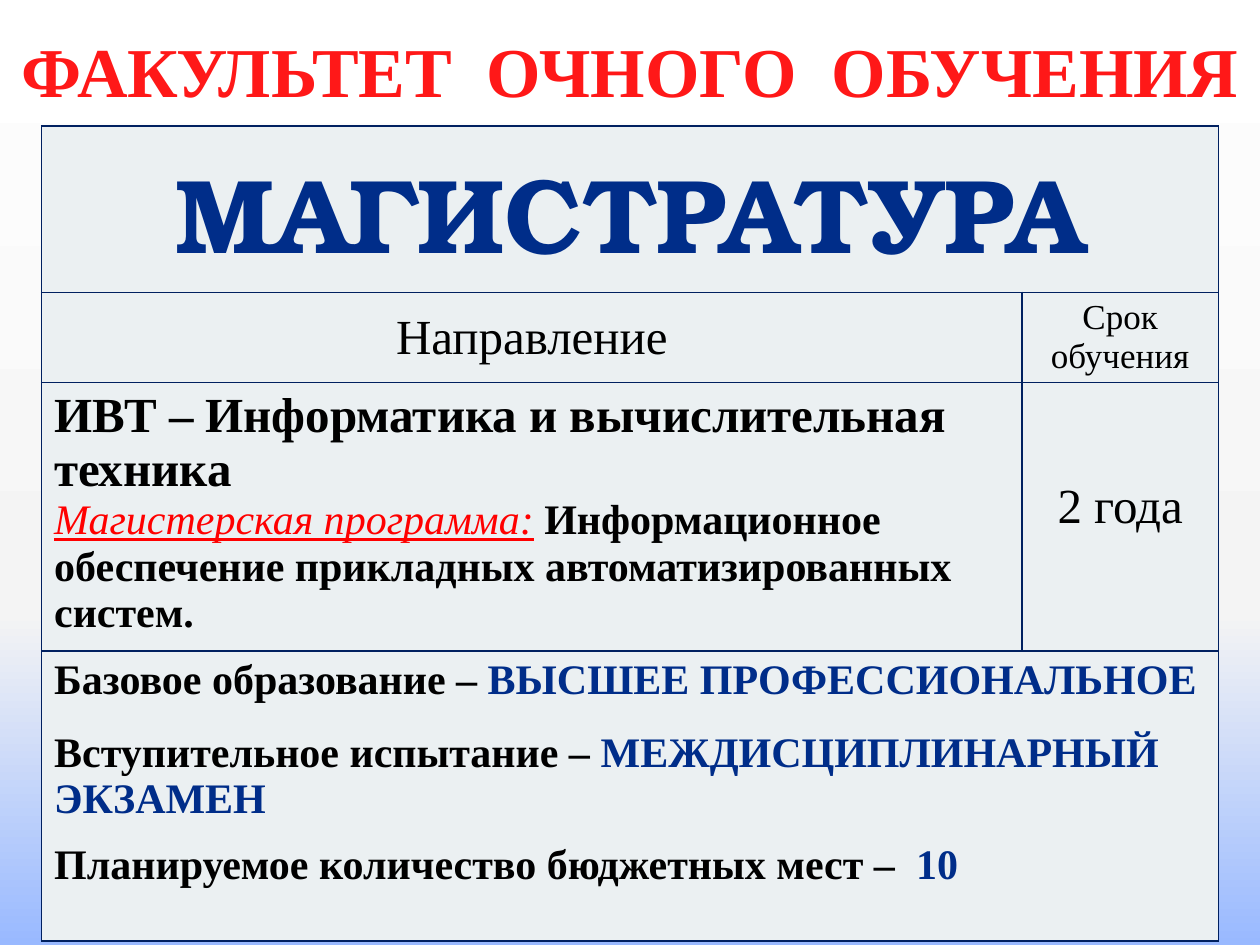
from lxml import etree
from pptx import Presentation
from pptx.dml.color import RGBColor
from pptx.enum import text
from pptx.oxml.ns import qn
from pptx.util import Inches, Pt

SERIF = "Times New Roman"
INK, RED, PANEL, BORDER, OUTLINE = "000000", "FF0000", "EBF0F2", "002060", "002165"
SKY = [(0, "FFFFFF"), (65, "F4F4F4"), (100, "99B9FF")]
SCARLET = [(0, "FF9797"), (75, "FF1818"), (100, "BD0000")]
NAVY = [(0, "001644"), (43, "002D89"), (48, "002A80"), (100, "001644")]
CENTER, LEFT = text.PP_ALIGN.CENTER, text.PP_ALIGN.LEFT
TOP, MIDDLE = text.MSO_ANCHOR.TOP, text.MSO_ANCHOR.MIDDLE


def paint(fill, color):
    """Fill solidly with a hex colour."""
    fill.solid()
    fill.fore_color.rgb = RGBColor.from_string(color)


def paint_gradient(fill, holder, stops):
    """Fill from top to bottom with the given (percent, hex) stops."""
    fill.gradient()
    fill.gradient_angle = 270
    stop_list = holder.find(qn("a:gradFill")).find(qn("a:gsLst"))
    for old_stop in list(stop_list):
        stop_list.remove(old_stop)
    for percent, color in stops:
        stop = etree.SubElement(stop_list, qn("a:gs"), pos=str(percent * 1000))
        etree.SubElement(stop, qn("a:srgbClr"), val=color)


def add_line(holder, tag, color, width, index):
    """Insert a solid line element of the given width at an index."""
    line = etree.Element(qn(tag), w=str(int(Pt(width))))
    solid = etree.SubElement(line, qn("a:solidFill"))
    etree.SubElement(solid, qn("a:srgbClr"), val=color)
    holder.insert(index, line)


def add_run(paragraph, words, size, color=INK, font=SERIF, bold=False, italic=False, underline=False):
    """Add one run; a list of stops as colour gives a gradient."""
    run = paragraph.add_run()
    run.text = words
    run.font.size, run.font.name = Pt(size), font
    run.font.bold, run.font.italic, run.font.underline = bold, italic, underline
    if isinstance(color, str):
        paint(run.font.fill, color)
    else:
        properties = run.font._element
        paint_gradient(run.font.fill, properties, color)
        if color is NAVY:
            add_line(properties, "a:ln", OUTLINE, 0.71, 0)


def style_cell(cell):
    """Give a cell its panel fill and its four borders."""
    paint(cell.fill, PANEL)
    properties = cell._tc.get_or_add_tcPr()
    for index, side in enumerate("LRTB"):
        add_line(properties, f"a:ln{side}", BORDER, 1, index)


def fill_cell(cell, paragraphs, align=LEFT, anchor=TOP):
    """Write (space before, runs) paragraphs, each run being (words, size, options)."""
    cell.vertical_anchor = anchor
    frame = cell.text_frame
    for index, (space, runs) in enumerate(paragraphs):
        paragraph = frame.add_paragraph() if index else frame.paragraphs[0]
        paragraph.alignment = align
        if space:
            paragraph.space_before = Pt(space)
        for words, size, options in runs:
            add_run(paragraph, words, size, **options)


def add_heading(slide, left, top, width, height):
    """Place the faculty heading in the title placeholder."""
    heading = slide.shapes.title
    heading.left, heading.top, heading.width, heading.height = map(Inches, (left, top, width, height))
    frame = heading.text_frame
    frame.vertical_anchor = TOP
    frame.auto_size = text.MSO_AUTO_SIZE.NONE
    frame.paragraphs[0].alignment = CENTER
    add_run(frame.paragraphs[0], "ФАКУЛЬТЕТ  ОЧНОГО  ОБУЧЕНИЯ", 40, SCARLET, bold=True)


def add_programme(slide, left, top, columns, rows):
    """Place the table of the master's programme."""
    table = slide.shapes.add_table(
        len(rows), len(columns), Inches(left), Inches(top), Inches(sum(columns)), Inches(sum(rows))
    ).table
    table.first_row = table.horz_banding = False
    for column, width in zip(table.columns, columns):
        column.width = Inches(width)
    for row, height in zip(table.rows, rows):
        row.height = Inches(height)
    for cell in table.iter_cells():
        style_cell(cell)
    for row in (0, len(rows) - 1):
        table.cell(row, 0).merge(table.cell(row, 1))

    bold, navy = {"bold": True}, {"bold": True, "color": NAVY}
    fill_cell(table.cell(0, 0), [(0, [("МАГИСТРАТУРА", 60, {**navy, "font": "TeX Gyre Bonum"})])], CENTER)
    fill_cell(table.cell(1, 0), [(0, [("Направление", 28, {})])], CENTER, MIDDLE)
    fill_cell(table.cell(1, 1), [(0, [("Срок обучения", 20, {})])], CENTER)
    fill_cell(table.cell(2, 0), [
        (0, [("ИВТ – Информатика и вычислительная  техника", 28, bold)]),
        (0, [
            ("Магистерская программа:", 24, {"color": RED, "italic": True, "underline": True}),
            (" ", 24, {"color": RED, "italic": True}),
            ("Информационное обеспечение прикладных автоматизированных систем.", 24, bold),
        ]),
    ])
    duration = table.cell(2, 1)
    duration.margin_bottom = Inches(0.2)
    fill_cell(duration, [(0, [("2 года", 28, {})])], CENTER, MIDDLE)
    admission = [
        (0, "Базовое образование – ", "ВЫСШЕЕ ПРОФЕССИОНАЛЬНОЕ"),
        (15, "Вступительное испытание – ", "МЕЖДИСЦИПЛИНАРНЫЙ ЭКЗАМЕН"),
        (11, "Планируемое количество бюджетных мест –  ", "10"),
    ]
    fill_cell(table.cell(3, 0), [
        (space, [(label, 24, bold), (value, 24, navy)]) for space, label, value in admission
    ])


def main():
    """Build and save the slide."""
    deck = Presentation()
    deck.slide_width, deck.slide_height = Inches(10), Inches(7.5)
    slide = deck.slides.add_slide(deck.slide_layouts[5])
    backdrop = slide.background.fill
    backdrop.solid()
    paint_gradient(backdrop, slide._element.find(".//" + qn("p:bgPr")), SKY)
    add_heading(slide, 0, 0.17, 10, 0.75)
    add_programme(slide, 0.33, 1, (7.78, 1.56), (1.32, 0.71, 2.13, 2.3))
    deck.save("out.pptx")


if __name__ == "__main__":
    main()
